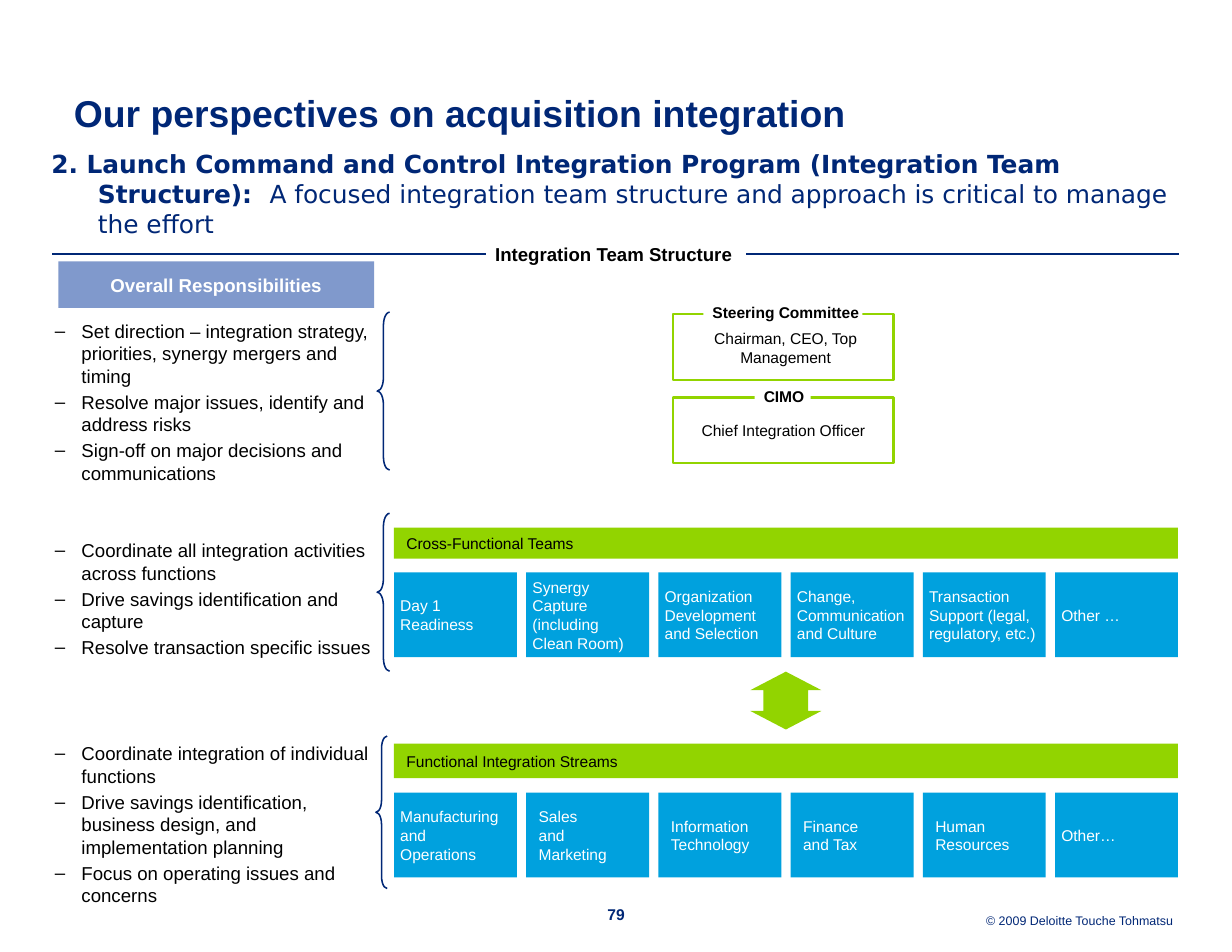
from lxml import etree
from pptx import Presentation
from pptx.dml.color import RGBColor
from pptx.enum.shapes import MSO_CONNECTOR, MSO_SHAPE
from pptx.enum.text import MSO_ANCHOR, PP_ALIGN
from pptx.oxml.ns import qn
from pptx.util import Pt

RECT = MSO_SHAPE.RECTANGLE
BRACE = MSO_SHAPE.LEFT_BRACE
ARROW = MSO_SHAPE.UP_DOWN_ARROW
LINE = MSO_CONNECTOR.STRAIGHT
TOP, MID, LOW = MSO_ANCHOR.TOP, MSO_ANCHOR.MIDDLE, MSO_ANCHOR.BOTTOM
LEFT, MIDDLE, RIGHT = PP_ALIGN.LEFT, PP_ALIGN.CENTER, PP_ALIGN.RIGHT

NAVY, GREEN, BLUE, HAZE = "002776", "92D400", "00A1DE", "8099CC"
BLACK, WHITE = "000000", "FFFFFF"
START, STEP, CELL, FULL = 253.3, 85, 79, 504

DUTIES = [
    (205.6, 107, ["Set direction – integration strategy, priorities, synergy mergers and timing",
                  "Resolve major issues, identify and address risks",
                  "Sign-off on major decisions and communications"]),
    (346.5, 78.5, ["Coordinate all integration activities across functions",
                   "Drive savings identification and capture",
                   "Resolve transaction specific issues"]),
    (477.2, 107, ["Coordinate integration of individual functions",
                  "Drive savings identification, business design, and implementation planning",
                  "Focus on operating issues and concerns"]),
]
BRACES = [(242.5, 200.7, 8, 101.5, 1.07), (242.5, 330, 8, 101.5, 1.07),
          (241.7, 473.2, 7.2, 98, 1.09)]
TEAMS = [("Day 1 Readiness", 4), ("Synergy Capture\n(including Clean Room)", 4),
         ("Organization Development and Selection", 4),
         ("Change, Communication and Culture", 4),
         ("Transaction Support (legal, regulatory, etc.)", 4), ("Other …", 4)]
STREAMS = [("Manufacturing and\vOperations", 4), ("Sales\vand\vMarketing", 8),
           ("Information\vTechnology", 8), ("Finance \vand Tax", 8),
           ("Human\vResources", 8), ("Other…", 4)]


def color(value):
    return RGBColor.from_string(value)


def style(font, size, tone, bold=False, face="Arial"):
    font.name, font.size, font.bold = face, Pt(size), bold
    font.color.rgb = color(tone)


def write(shape, text, size, tone, bold=False, align=LEFT, anchor=MID,
          pads=(0, 0, 0, 0), space=None):
    frame = shape.text_frame
    frame.word_wrap = True
    frame.vertical_anchor = anchor
    (frame.margin_left, frame.margin_top,
     frame.margin_right, frame.margin_bottom) = map(Pt, pads)
    frame.text = text
    for para in frame.paragraphs:
        para.alignment = align
        if space:
            para.line_spacing = space
        for run in para.runs:
            style(run.font, size, tone, bold)


def add_shape(slide, kind, box, fill=None, line=None, width=1):
    shape = slide.shapes.add_shape(kind, *map(Pt, box))
    shape.shadow.inherit = False
    if fill:
        shape.fill.solid()
        shape.fill.fore_color.rgb = color(fill)
    else:
        shape.fill.background()
    if line:
        shape.line.color.rgb = color(line)
        shape.line.width = Pt(width)
    else:
        shape.line.fill.background()
    return shape


def add_text(slide, box, text, size, tone, **opts):
    shape = slide.shapes.add_textbox(*map(Pt, box))
    write(shape, text, size, tone, **opts)
    return shape


def indent(para, gap):
    props = para._p.get_or_add_pPr()
    props.set("marL", str(Pt(gap)))
    props.set("indent", str(-Pt(gap)))
    return props


def add_lead(slide):
    shape = add_text(slide, (33, 95.8, 726, 58), "", 16, NAVY, anchor=TOP)
    para = shape.text_frame.paragraphs[0]
    indent(para, 30)
    parts = [("2. Launch Command and Control Integration Program "
              "(Integration Team Structure):  ", True),
             ("A focused integration team structure and approach is critical "
              "to manage the effort", False)]
    for text, bold in parts:
        run = para.add_run()
        run.text = text
        style(run.font, 16, NAVY, bold, "DejaVu Sans")


def add_list(slide, top, height, items):
    shape = add_text(slide, (35.3, top, 209.5, height), "\n".join(items),
                     12, BLACK, anchor=TOP)
    for pos, para in enumerate(shape.text_frame.paragraphs):
        props = indent(para, 17.1)
        etree.SubElement(props, qn("a:buFont")).set("typeface", "Arial")
        etree.SubElement(props, qn("a:buChar")).set("char", "–")
        if pos:
            para.space_before = Pt(2.4)


def add_brace(slide, left, top, width, height, curve):
    shape = add_shape(slide, BRACE, (left, top, width, height), line=NAVY)
    shape.adjustments[0] = curve
    shape.adjustments[1] = 0.5


def add_arrow(slide, box, shaft, head):
    shape = add_shape(slide, ARROW, box, GREEN)
    guides = shape._element.spPr.find(qn("a:prstGeom")).find(qn("a:avLst"))
    for old in list(guides):
        guides.remove(old)
    for name, value in (("adj1", shaft), ("adj2", head)):
        guide = etree.SubElement(guides, qn("a:gd"))
        guide.set("name", name)
        guide.set("fmla", f"val {value}")


def add_band(slide, top, height, text):
    band = add_shape(slide, RECT, (START, top, FULL, height), GREEN)
    write(band, text, 10, BLACK, pads=(8, 4, 8, 4))


def add_row(slide, top, cells):
    for pos, (text, pad) in enumerate(cells):
        box = (START + pos * STEP, top, CELL, 54.5)
        cell = add_shape(slide, RECT, box, BLUE)
        write(cell, text, 10, WHITE, pads=(pad, 4, 4, 4))


def add_tag(slide, box, text, size=10, anchor=MID, space=None):
    tag = add_shape(slide, RECT, box, WHITE)
    write(tag, text, size, BLACK, bold=True, anchor=anchor,
          pads=(5.8, 0, 0, 0), space=space)


def add_rule(slide):
    rule = slide.shapes.add_connector(LINE, Pt(33.7), Pt(163.3), Pt(757.7), Pt(163.3))
    rule.line.color.rgb = color(NAVY)
    rule.line.width = Pt(1)
    etree.SubElement(rule._element.spPr, qn("a:effectLst"))
    add_tag(slide, (312.5, 156.2, 167, 14.5), "Integration Team Structure", 12, LOW, 0.95)


def add_board(slide):
    add_shape(slide, RECT, (432.7, 202, 141.7, 42.2), line=GREEN, width=1.5)
    add_tag(slide, (452.2, 191, 102.2, 20), "Steering Committee")
    add_text(slide, (443.5, 208, 123, 31.7), "Chairman, CEO, Top Management",
             10, BLACK, align=MIDDLE, anchor=TOP, pads=(7.2, 3.6, 7.2, 3.6))
    chief = add_shape(slide, RECT, (432.7, 255.5, 141.7, 42.2), line=GREEN, width=1.5)
    write(chief, "Chief Integration Officer", 10, BLACK, align=MIDDLE)
    add_tag(slide, (485.2, 245, 36, 19), "CIMO")


def main():
    deck = Presentation()
    deck.slide_width, deck.slide_height = Pt(792), Pt(612)
    slide = deck.slides.add_slide(deck.slide_layouts[6])
    add_text(slide, (47.5, 43.7, 729.5, 56.2), "Our perspectives on acquisition integration",
             24, NAVY, bold=True, space=1.05)
    add_lead(slide)
    add_rule(slide)
    head = add_shape(slide, RECT, (37.5, 168, 203, 30), HAZE)
    write(head, "Overall Responsibilities", 12, WHITE, bold=True, align=MIDDLE,
          pads=(21.6, 7.2, 21.6, 7.2), space=1.06)
    for duty in DUTIES:
        add_list(slide, *duty)
    for brace in BRACES:
        add_brace(slide, *brace)
    add_board(slide)
    add_band(slide, 339.2, 20, "Cross-Functional Teams")
    add_row(slide, 368, TEAMS)
    add_arrow(slide, (482.4, 431.8, 45.6, 37.2), 63000, 32000)
    add_band(slide, 478, 22.3, "Functional Integration Streams")
    add_row(slide, 509.6, STREAMS)
    add_text(slide, (383.8, 581.8, 24.5, 13), "79", 10, NAVY, bold=True,
             align=MIDDLE, anchor=TOP, space=Pt(12))
    add_text(slide, (554.4, 584.6, 200, 13), "© 2009 Deloitte Touche Tohmatsu",
             8, NAVY, align=RIGHT, anchor=TOP, space=Pt(12))
    deck.save("out.pptx")


if __name__ == "__main__":
    main()
